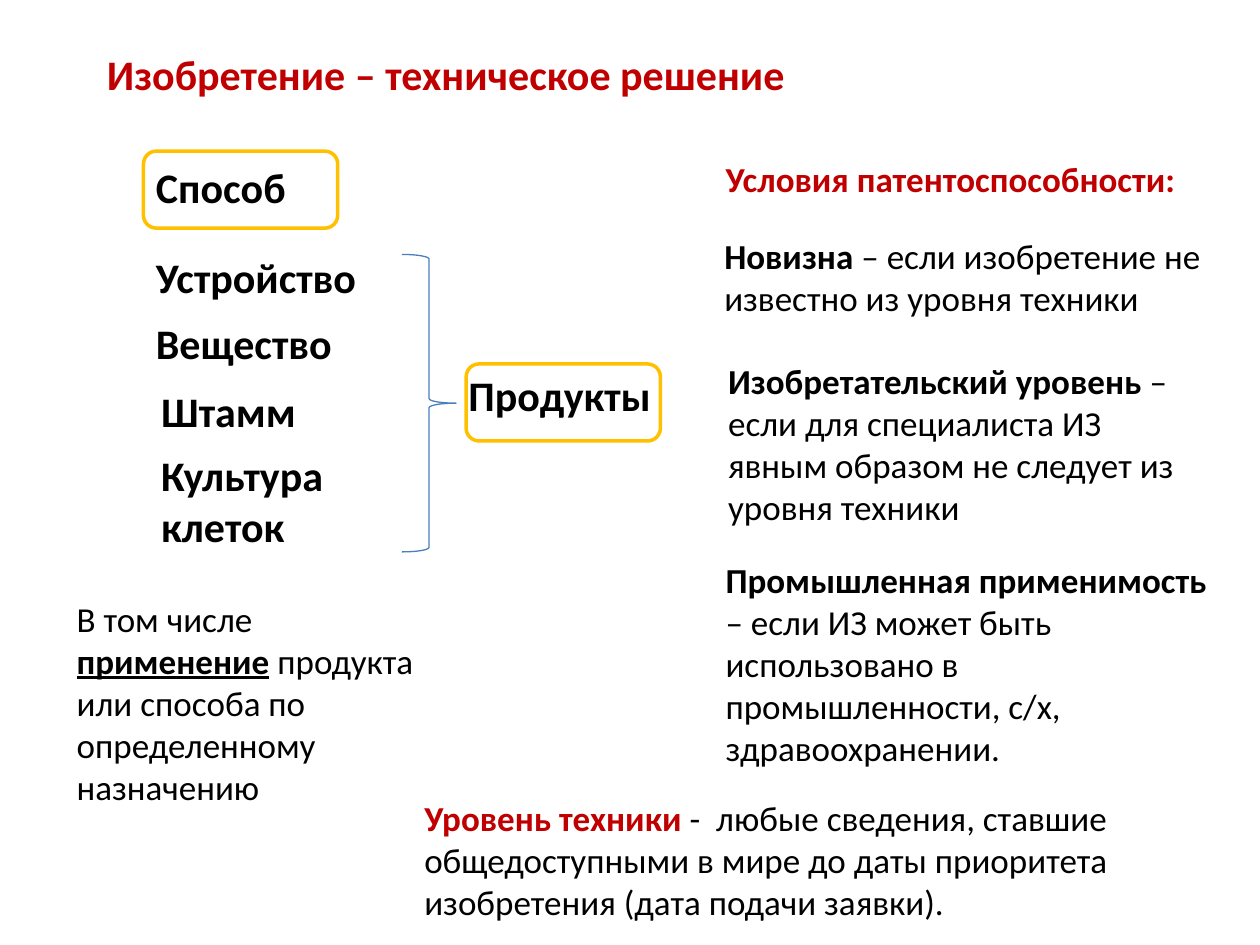
import pptx
import pptx.dml.color
import pptx.enum.shapes
import pptx.enum.text
import pptx.util

Pt = pptx.util.Pt
BLACK = pptx.dml.color.RGBColor(0x00, 0x00, 0x00)
RED = pptx.dml.color.RGBColor(0xC0, 0x00, 0x00)
GOLD = pptx.dml.color.RGBColor(0xFF, 0xC0, 0x00)
BLUE = pptx.dml.color.RGBColor(0x4B, 0x7E, 0xBC)

presentation = pptx.Presentation()
presentation.slide_width = Pt(720)
presentation.slide_height = Pt(540)
slide = presentation.slides.add_slide(presentation.slide_layouts[6])


def add_text(left, top, width, height, size, runs):
    """Add a text box; each run is (text, colour, bold, underline)."""
    box = slide.shapes.add_textbox(Pt(left), Pt(top), Pt(width), Pt(height))
    frame = box.text_frame
    frame.word_wrap = True
    frame.auto_size = pptx.enum.text.MSO_AUTO_SIZE.SHAPE_TO_FIT_TEXT
    for text, colour, bold, underline in runs:
        run = frame.paragraphs[0].add_run()
        run.text = text
        run.font.name = "Calibri"
        run.font.size = Pt(size)
        run.font.color.rgb = colour
        run.font.bold = bold
        run.font.underline = underline


def add_outline(kind, left, top, width, height, colour, weight):
    shape = slide.shapes.add_shape(kind, Pt(left), Pt(top), Pt(width), Pt(height))
    shape.shadow.inherit = False
    shape.fill.background()
    shape.line.color.rgb = colour
    shape.line.width = Pt(weight)


# Title, kinds of invention and their common name
headings = [
    ("Изобретение – техническое решение", 54, 24, 414, 36, RED),
    ("Способ", 82, 88.6, 164, 36, BLACK),
    ("Устройство", 82, 140.4, 153, 36, BLACK),
    ("Вещество", 82, 178, 136, 36, BLACK),
    ("Штамм", 85, 217, 142, 36, BLACK),
    ("Культура клеток", 85, 253.5, 108, 65.5, BLACK),
    ("Продукты", 260.6, 207.4, 150.5, 36, BLACK),
]
for text, left, top, width, height, colour in headings:
    add_text(left, top, width, height, 24, [(text, colour, True, False)])

add_text(36.7, 337.7, 209.5, 128, 20, [
    ("В том числе ", BLACK, False, False),
    ("применение", BLACK, True, True),
    (" продукта или способа по определенному назначению", BLACK, False, False),
])

# Conditions of patentability: bold term, then its explanation
conditions = [
    ("Условия патентоспособности:", "", RED, 407.5, 86.4, 289.5, 31.5),
    ("Новизна", " – если изобретение не известно из уровня техники",
     BLACK, 406.8, 130.3, 311.8, 55.5),
    ("Изобретательский уровень ",
     "– если для специалиста ИЗ явным образом не следует из уровня техники",
     BLACK, 409, 201.6, 283.7, 104.4),
    ("Промышленная применимость ",
     "– если ИЗ может быть использовано в промышленности, с/х, здравоохранении.",
     BLACK, 407.5, 315.4, 289.5, 128),
    ("Уровень техники ",
     "-  любые сведения, ставшие общедоступными в мире до даты приоритета "
     "изобретения (дата подачи заявки).",
     RED, 235.4, 451.4, 489.6, 80),
]
for term, explanation, colour, left, top, width, height in conditions:
    runs = [(term, colour, True, False)]
    if explanation:
        runs.append((explanation, BLACK, False, False))
    add_text(left, top, width, height, 20, runs)

# Brace joining the products, frames around the two groups
shapes = pptx.enum.shapes.MSO_SHAPE
add_outline(shapes.RIGHT_BRACE, 229.7, 145.4, 31, 170, BLUE, 0.75)
for left, top in [(82, 86.4), (266.4, 208)]:
    add_outline(shapes.ROUNDED_RECTANGLE, left, top, 111, 44, GOLD, 2)

presentation.save("out.pptx")
